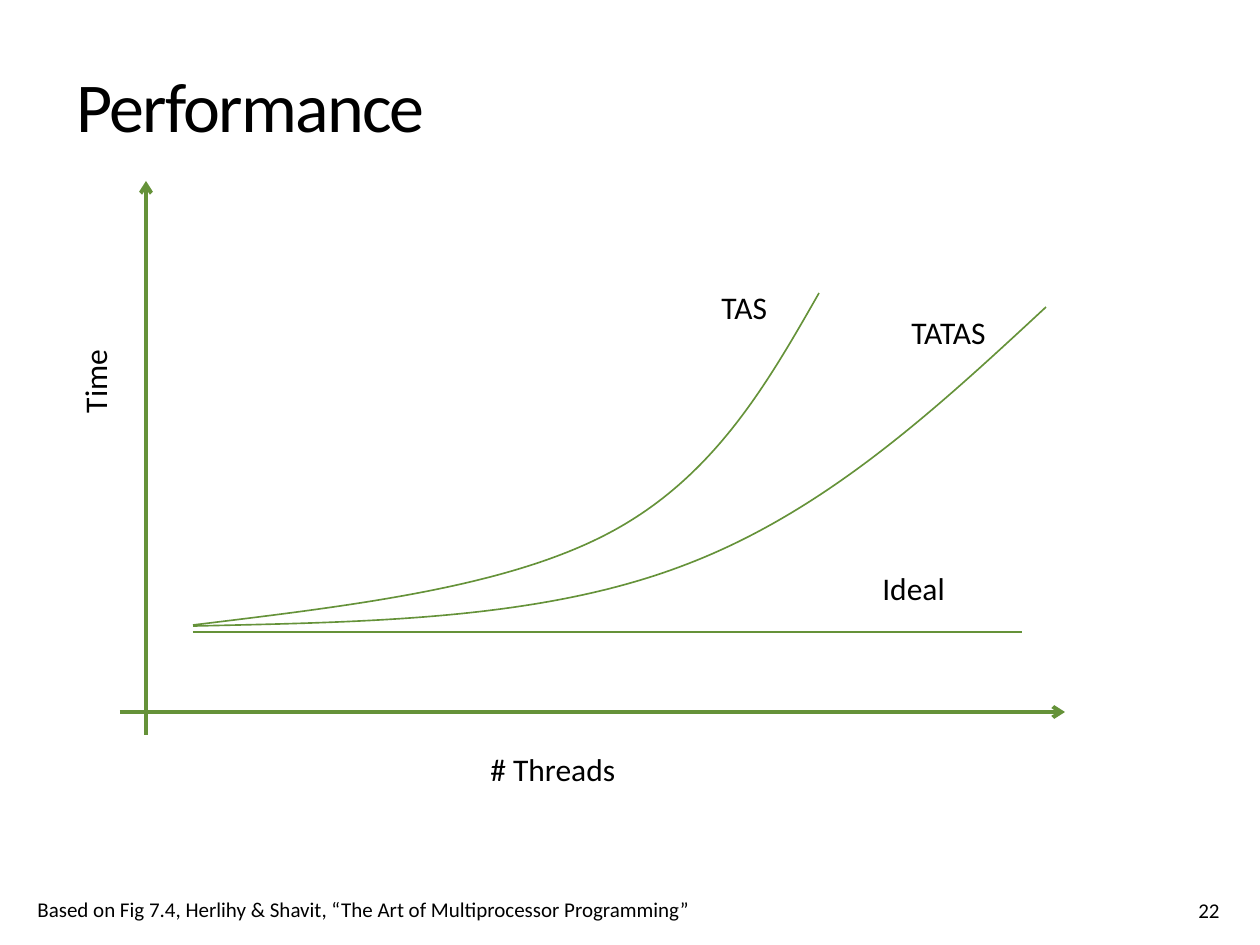
from lxml.etree import SubElement
from pptx import Presentation
from pptx.dml.color import RGBColor
from pptx.enum.shapes import MSO_CONNECTOR as Connector
from pptx.enum.text import MSO_ANCHOR as Anchor, MSO_AUTO_SIZE as AutoSize, PP_ALIGN as Align
from pptx.oxml.ns import qn
from pptx.util import Pt

# Content, all lengths in px
PX = 914400 / 126
COLORS = {"text": "000000", "line": "659239"}
FONT = "Calibri"
THICK, THIN = 2.25, 0.94
TITLE = ("Performance", (64, 71, 1111, 105))
LINES = [  # start, end, width in points, arrow
    ((146, 735), (146, 181), THICK, True),
    ((120, 712), (1065, 712), THICK, True),
    ((193, 632), (1022, 632), THIN, False),
]
CURVES = {  # start point, then Bezier segments of two controls and an end
    "TATAS": [(193, 626), (367, 622), (539, 620), (682, 566),
              (824, 513), (935, 410), (1046, 307)],
    "TAS": [(193, 625), (349, 606), (505, 588), (609, 533),
            (713, 478), (766, 386), (819, 293)],
}
LABELS = [  # text, place, size, rotation
    ("# Threads", (478, 744, 151, 50), 18, 0),
    ("Time", (50, 356, 89, 50), 18, 270),
    ("Ideal", (870, 563, 88, 50), 18, 0),
    ("TATAS", (899, 307, 100, 50), 18, 0),
    ("TAS", (709, 282, 72, 50), 18, 0),
    ("Based on Fig 7.4, Herlihy & Shavit, “The Art of Multiprocessor Programming”",
     (25, 890, 684, 38), 12, 0),
]
PAGE_NUMBER = ("22", (1186, 879, 63, 50))


def emu(*lengths):
    return [round(length * PX) for length in lengths]


def color(name):
    return RGBColor.from_string(COLORS[name])


def style_text(para, size):
    para.font.name = FONT
    para.font.size = Pt(size)
    para.font.color.rgb = color("text")


def style_line(shape, width):
    shape.line.color.rgb = color("line")
    shape.line.width = Pt(width)


def add_line(page, start, end, width, arrow):
    line = page.shapes.add_connector(Connector.STRAIGHT, *emu(*start, *end))
    style_line(line, width)
    if arrow:
        SubElement(line.line._get_or_add_ln(), qn("a:tailEnd"), type="arrow")
    SubElement(line._element.spPr, qn("a:effectLst"))


def add_curve(page, points):
    builder = page.shapes.build_freeform(*emu(*points[0]), scale=1.0)
    builder.add_line_segments([emu(*point) for point in points[1:]], close=False)
    curve = builder.convert_to_shape()
    # Every three straight pieces become one Bezier segment
    outline = next(curve._element.iter(qn("a:path")))
    pieces = outline.findall(qn("a:lnTo"))
    for first in range(0, len(pieces), 3):
        segment = SubElement(outline, qn("a:cubicBezTo"))
        for piece in pieces[first:first + 3]:
            segment.append(piece[0])
            outline.remove(piece)
    curve.fill.background()
    style_line(curve, THIN)
    curve.shadow.inherit = False


def add_label(page, text, place, size, rotation=0):
    box = page.shapes.add_textbox(*emu(*place))
    box.rotation = rotation
    frame = box.text_frame
    frame.text = text
    frame.word_wrap = False
    frame.auto_size = AutoSize.SHAPE_TO_FIT_TEXT
    style_text(frame.paragraphs[0], size)
    return frame


def add_title(page, text, place):
    title = page.shapes.title
    title.left, title.top, title.width, title.height = emu(*place)
    frame = title.text_frame
    frame.text = text
    frame.auto_size = AutoSize.NONE
    frame.vertical_anchor = Anchor.TOP
    frame.margin_top = emu(5)[0]
    para = frame.paragraphs[0]
    para.alignment = Align.LEFT
    para.line_spacing = Pt(40)
    style_text(para, 40)
    para.runs[0].font._element.set("spc", "-100")


def main():
    deck = Presentation()
    deck.slide_width, deck.slide_height = emu(1260, 945)
    page = deck.slides.add_slide(deck.slide_layouts[5])
    add_title(page, *TITLE)

    # Axes and curves
    for line in LINES:
        add_line(page, *line)
    for points in CURVES.values():
        add_curve(page, points)

    # Labels, source and page number
    for label in LABELS:
        add_label(page, *label)
    number = add_label(page, *PAGE_NUMBER, 12)
    number.word_wrap = True
    number.auto_size = AutoSize.NONE
    number.vertical_anchor = Anchor.BOTTOM

    deck.save("out.pptx")


if __name__ == "__main__":
    main()
